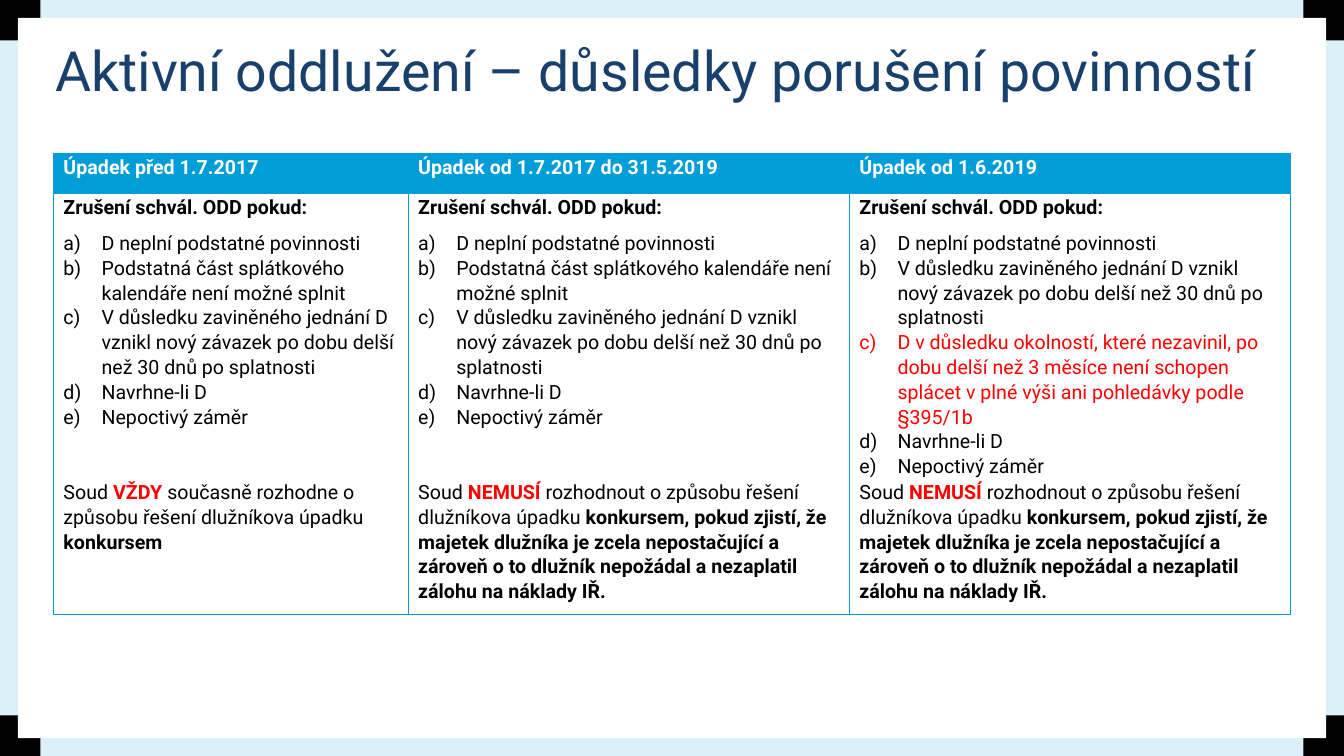
from lxml.etree import SubElement
from pptx import Presentation
from pptx.dml.color import RGBColor
from pptx.enum.shapes import MSO_SHAPE
from pptx.enum.text import MSO_ANCHOR, MSO_AUTO_SIZE as AUTO, PP_ALIGN
from pptx.oxml import parse_xml
from pptx.oxml.ns import nsdecls, qn
from pptx.util import Cm, Pt

COLORS = {"sky": "DBEFF9", "navy": "17406D", "blue": "009DD9",
          "black": "000000", "white": "FFFFFF", "red": "FF0000"}
WIDTH, HEIGHT = 33.87, 19.05
NO_STYLE = "{2D5ABB26-0587-4C30-8999-92F81FD0307C}"

HEADERS = ["Úpadek před 1.7.2017", "Úpadek od 1.7.2017 do 31.5.2019",
           "Úpadek od 1.6.2019"]
LEAD = "Zrušení schvál. ODD pokud:"
DUTIES = "D neplní podstatné povinnosti"
CALENDAR = "Podstatná část splátkového kalendáře není možné splnit"
DEBT = ("V důsledku zaviněného jednání D vznikl nový závazek "
        "po dobu delší než 30 dnů po splatnosti")
UNABLE = ("D v důsledku okolností, které nezavinil, po dobu delší než 3 měsíce "
          "není schopen splácet v plné výši ani pohledávky podle §395/1b")
CLOSING = ["Navrhne-li D", "Nepoctivý záměr"]
OLD_REASONS = [DUTIES, CALENDAR, DEBT, *CLOSING]
NEW_REASONS = [DUTIES, DEBT, UNABLE, *CLOSING]
ALWAYS = [("Soud ", "black", False), ("VŽDY", "red", True),
          (" současně rozhodne o způsobu řešení dlužníkova úpadku ", "black", False),
          ("konkursem", "black", True)]
OPTIONAL = [("Soud ", "black", False), ("NEMUSÍ ", "red", True),
            ("rozhodnout o způsobu řešení dlužníkova úpadku ", "black", False),
            ("konkursem, pokud zjistí, že majetek dlužníka je zcela nepostačující "
             "a zároveň o to dlužník nepožádal a nezaplatil zálohu na náklady IŘ.",
             "black", True)]


def rgb(name):
    """Return the named colour."""
    return RGBColor.from_string(COLORS[name])


def set_attrs(obj, values):
    """Set each attribute of obj from a dict."""
    for name, value in values.items():
        setattr(obj, name, value)


def add_run(p, text, color, bold=False, size=14):
    """Add a formatted run to a paragraph."""
    r = p.add_run()
    r.text = text
    set_attrs(r.font, {"name": "Roboto", "size": Pt(size), "bold": bold})
    r.font.color.rgb = rgb(color)


def add_box(s, x, y, w, h, color):
    """Add a plain filled rectangle."""
    sp = s.shapes.add_shape(MSO_SHAPE.RECTANGLE, Cm(x), Cm(y), Cm(w), Cm(h))
    sp.shadow.inherit = False
    sp.fill.solid()
    sp.fill.fore_color.rgb = rgb(color)
    sp.line.fill.background()


def add_frame(s, w, h, corner=1.02, margin=0.45):
    """Draw the background, corner blocks and white panel."""
    s.background.fill.solid()
    s.background.fill.fore_color.rgb = rgb("sky")
    for y in (0, h - corner):
        for x in (0, w - corner):
            add_box(s, x, y, corner, corner, "black")
    add_box(s, margin, margin, w - 2 * margin, h - 2 * margin, "white")


def add_title(s, x, y, w, h, text):
    """Place the title placeholder in front of the frame."""
    sp = s.shapes.title
    set_attrs(sp, {"left": Cm(x), "top": Cm(y), "width": Cm(w), "height": Cm(h)})
    sp.element.getparent().append(sp.element)
    tf = sp.text_frame
    set_attrs(tf, {"word_wrap": True, "auto_size": AUTO.NONE,
                   "vertical_anchor": MSO_ANCHOR.TOP})
    p = tf.paragraphs[0]
    set_attrs(p, {"alignment": PP_ALIGN.LEFT, "line_spacing": 0.89})
    add_run(p, text, "navy", size=39.6)


def style_cell(cell, fill, sides):
    """Set margins, fill and the borders on the given sides."""
    set_attrs(cell, {"margin_left": Cm(0.25), "margin_right": Cm(0.25),
                     "margin_top": Cm(0.03), "margin_bottom": 0})
    cell.fill.solid()
    cell.fill.fore_color.rgb = rgb(fill)
    tcPr = cell._tc.get_or_add_tcPr()
    for i, side in enumerate(sides):
        tcPr.insert(i, parse_xml(
            f'<a:ln{side} {nsdecls("a")} w="6350"><a:solidFill>'
            f'<a:srgbClr val="{COLORS["blue"]}"/></a:solidFill></a:ln{side}>'))


def fill_cell(cell, runs, reasons=()):
    """Write a paragraph of runs, then a lettered list."""
    tf = cell.text_frame
    p = tf.paragraphs[0]
    set_attrs(p, {"line_spacing": 1.07, "space_after": Pt(8)})
    for run in runs:
        add_run(p, *run)
    for i, reason in enumerate(reasons, 1):
        p = tf.add_paragraph()
        set_attrs(p, {"line_spacing": 1.07,
                      "space_after": Pt(8 if i == len(reasons) else 0)})
        add_run(p, reason, "red" if reason == UNABLE else "black")
        pPr = p._p.get_or_add_pPr()
        pPr.set("marL", str(Cm(0.96)))
        pPr.set("indent", str(-Cm(0.96)))
        SubElement(pPr, qn("a:buAutoNum"), type="alphaLcParenR")


def add_periods(s, x, y, widths, heights):
    """Build the table comparing the three insolvency periods."""
    tbl = s.shapes.add_table(len(heights), len(widths), Cm(x), Cm(y),
                             Cm(sum(widths)), Cm(sum(heights))).table
    set_attrs(tbl, {"first_row": False, "horz_banding": False})
    tbl._tbl.tblPr.find(qn("a:tableStyleId")).text = NO_STYLE
    for col, width in zip(tbl.columns, widths):
        col.width = Cm(width)
    for row, height in zip(tbl.rows, heights):
        row.height = Cm(height)
    reasons = [OLD_REASONS, OLD_REASONS, NEW_REASONS]
    rulings = [ALWAYS, OPTIONAL, OPTIONAL]
    for c, header in enumerate(HEADERS):
        head, body, foot = (tbl.cell(r, c) for r in range(3))
        style_cell(head, "blue", "LRT")
        style_cell(body, "white", "LR")
        style_cell(foot, "white", "LRB")
        fill_cell(head, [(header, "white", True)])
        fill_cell(body, [(LEAD, "black", True)], reasons[c])
        fill_cell(foot, rulings[c])


def main():
    """Build and save the slide."""
    prs = Presentation()
    set_attrs(prs, {"slide_width": Cm(WIDTH), "slide_height": Cm(HEIGHT)})
    s = prs.slides.add_slide(prs.slide_layouts[5])
    add_frame(s, WIDTH, HEIGHT)
    add_title(s, 1.14, 0.99, 31.37, 2.41,
              "Aktivní oddlužení – důsledky porušení povinností")
    add_periods(s, 1.35, 3.86, [8.94, 11.12, 11.12], [1.02, 7.09, 3.43])
    prs.save("out.pptx")


if __name__ == "__main__":
    main()
